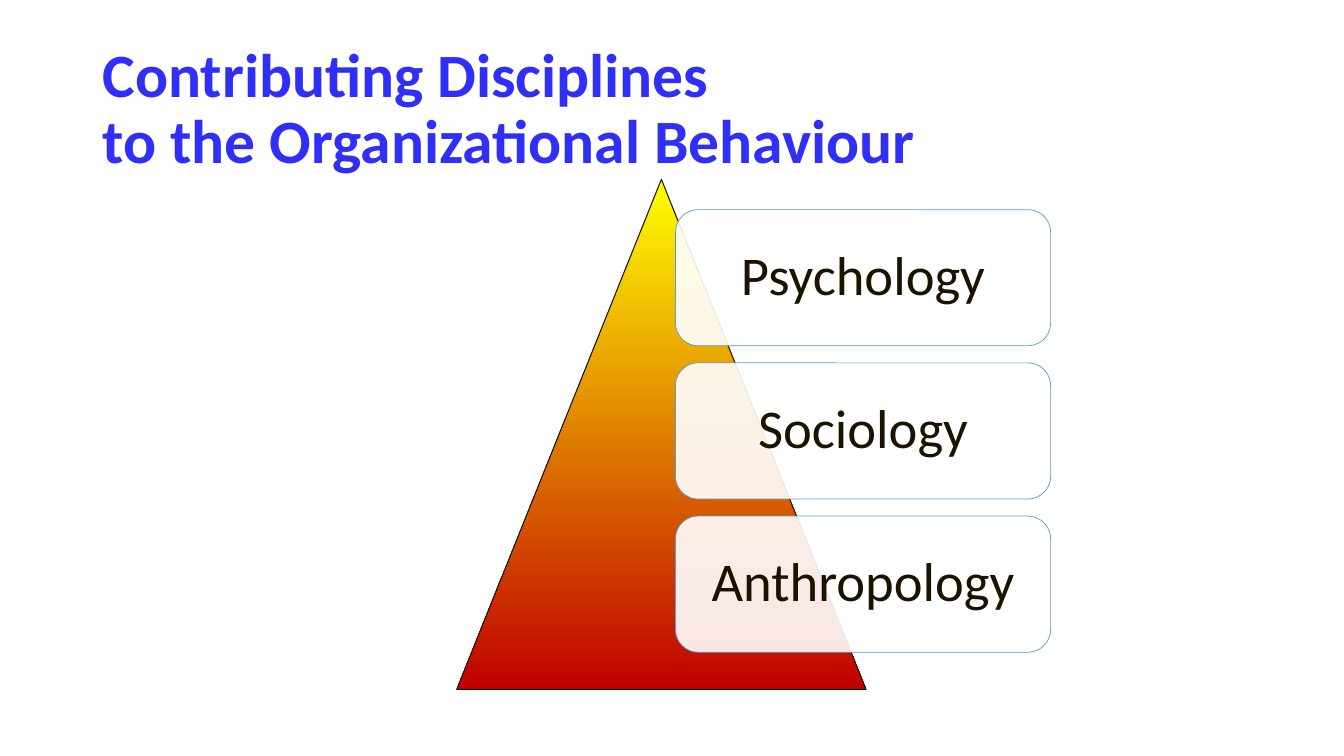
from lxml import etree
from pptx import Presentation
from pptx.dml.color import RGBColor
from pptx.enum.shapes import MSO_SHAPE
from pptx.enum.text import MSO_ANCHOR, PP_ALIGN
from pptx.oxml.ns import qn
from pptx.util import Inches, Pt

TRIANGLE = MSO_SHAPE.ISOSCELES_TRIANGLE
ROUNDED = MSO_SHAPE.ROUNDED_RECTANGLE
MIDDLE = MSO_ANCHOR.MIDDLE
LEFT, CENTER = PP_ALIGN.LEFT, PP_ALIGN.CENTER


def rgb(value):
    return RGBColor.from_string(value)


def write(sp, text, size, color, bold=False, align=LEFT, inset=0.1):
    tf = sp.text_frame
    tf.word_wrap = True
    tf.vertical_anchor = MIDDLE
    tf.margin_left = tf.margin_right = Inches(inset)
    p = tf.paragraphs[0]
    p.alignment = align
    p.line_spacing = 0.9
    p.text = text
    for r in p.runs:
        r.font.name = "Calibri"
        r.font.size = Pt(size)
        r.font.bold = bold
        r.font.color.rgb = rgb(color)


prs = Presentation()
prs.slide_width, prs.slide_height = Inches(13.33), Inches(7.5)
s = prs.slides.add_slide(prs.slide_layouts[6])

# Title
title = s.shapes.add_textbox(Inches(0.92), Inches(0.37), Inches(8.83), Inches(1.45))
write(title, "Contributing Disciplines\vto the Organizational Behaviour", 44, "2F2FF7", bold=True)

# Pyramid with a top-to-bottom gradient
pyramid = s.shapes.add_shape(TRIANGLE, Inches(4.53), Inches(1.78), Inches(4.06), Inches(5.06))
pyramid.shadow.inherit = False
pyramid.fill.gradient()
pyramid.fill.gradient_angle = 270
for stop, position, color in zip(pyramid.fill.gradient_stops, (0, 1), ("FFFF00", "C00000")):
    stop.position = position
    stop.color.rgb = rgb(color)
pyramid.line.color.rgb = rgb("1A1300")
pyramid.line.width = Pt(0.75)

# Discipline cards, slightly see-through
for i, discipline in enumerate(["Psychology", "Sociology", "Anthropology"]):
    card = s.shapes.add_shape(ROUNDED, Inches(6.7), Inches(2.08 + 1.52 * i), Inches(3.72), Inches(1.35))
    card.shadow.inherit = False
    card.fill.solid()
    card.fill.fore_color.rgb = rgb("FFFFFF")
    white = card.fill._xPr.find(qn("a:solidFill"))[0]
    etree.SubElement(white, qn("a:alpha")).set("val", "90000")
    card.line.color.rgb = rgb("5B9BD5")
    card.line.width = Pt(0.5)
    write(card, discipline, 39, "1A1300", align=CENTER, inset=0.16)

prs.save("out.pptx")
